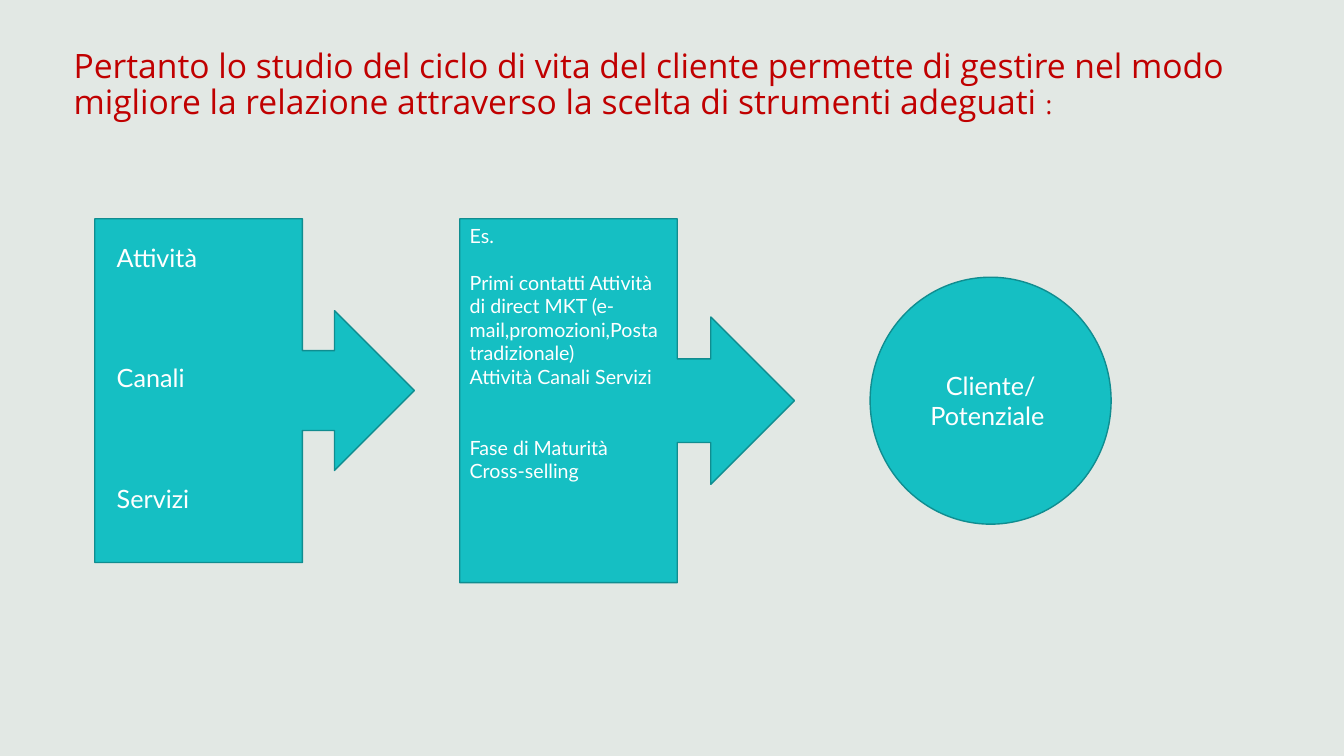
from pptx import Presentation
from pptx.dml.color import RGBColor as RGB
from pptx.enum.shapes import MSO_SHAPE as Shape
from pptx.enum.text import MSO_ANCHOR as Anchor, PP_ALIGN as Align
from pptx.util import Inches, Pt

COLORS = {"back": "E2E8E4", "title": "C00000", "fill": "15BFC3",
          "line": "108D90", "text": "FFFFFF"}
LEADING = 1.2  # line height of Lato, in ems


def color(name):
    return RGB.from_string(COLORS[name])


def style(par, size, name="Lato", tint="text"):
    par.font.size = Pt(size)
    par.font.name = name
    par.font.color.rgb = color(tint)


def add_title(slide, box, text, mark):
    """Fill the title, ending in a smaller punctuation mark."""
    title = slide.shapes.title
    title.left, title.top, title.width, title.height = map(Inches, box)
    frame = title.text_frame
    frame.word_wrap = True
    frame.vertical_anchor = Anchor.TOP
    par = frame.paragraphs[0]
    par.alignment = Align.LEFT
    par.line_spacing = 0.9
    style(par, 24, "Open Sans", "title")
    for part, size in ((text, 24), (mark, 18)):
        run = par.add_run()
        run.text = part
        run.font.size = Pt(size)


def add_block(slide, kind, box):
    block = slide.shapes.add_shape(kind, *map(Inches, box))
    block.shadow.inherit = False
    block.fill.solid()
    block.fill.fore_color.rgb = color("fill")
    block.line.color.rgb = color("line")
    block.line.width = Pt(1)
    return block


def add_callout(slide, box, inset, size, items):
    """Draw an arrow callout; items pair a text with the lines left free above it."""
    add_block(slide, Shape.RIGHT_ARROW_CALLOUT, box)
    left, top, width, height = box
    dx, dy, wide, high = inset
    note = slide.shapes.add_textbox(*map(Inches, (left + dx, top + dy, wide, high)))
    frame = note.text_frame
    frame.word_wrap = True
    for i, (text, gap) in enumerate(items):
        par = frame.add_paragraph() if i else frame.paragraphs[0]
        par.text = text
        if gap:
            par.space_before = Pt(gap * size * LEADING)
        style(par, size)


def add_client(slide, box):
    frame = add_block(slide, Shape.OVAL, box).text_frame
    frame.word_wrap = True
    frame.vertical_anchor = Anchor.MIDDLE
    par = frame.paragraphs[0]
    par.text = "Cliente/ Potenziale "
    par.alignment = Align.CENTER
    style(par, 18)


def main():
    deck = Presentation()
    deck.slide_width, deck.slide_height = Inches(13.33), Inches(7.5)
    slide = deck.slides.add_slide(deck.slide_layouts[5])
    slide.background.fill.solid()
    slide.background.fill.fore_color.rgb = color("back")

    add_title(slide, (0.63, 0.44, 12.32, 0.91),
              "Pertanto lo studio del ciclo di vita del cliente permette di gestire "
              "nel modo migliore la relazione attraverso la scelta di strumenti adeguati ",
              ":")
    add_callout(slide, (0.94, 2.17, 3.17, 3.41), (0.12, 0.18, 1.8, 2.83), 18,
                [("Attività", 0), ("Canali", 3), ("Servizi", 3)])
    add_callout(slide, (4.56, 2.17, 3.32, 3.61), (0, 0, 2.11, 2.69), 14,
                [("Es.", 0),
                 ("Primi contatti Attività di direct MKT "
                  "(e-mail,promozioni,Posta tradizionale)", 1),
                 ("Attività Canali Servizi", 0),
                 ("Fase di Maturità Cross-selling", 2)])
    add_client(slide, (8.63, 2.75, 2.39, 2.45))
    deck.save("out.pptx")


if __name__ == "__main__":
    main()
